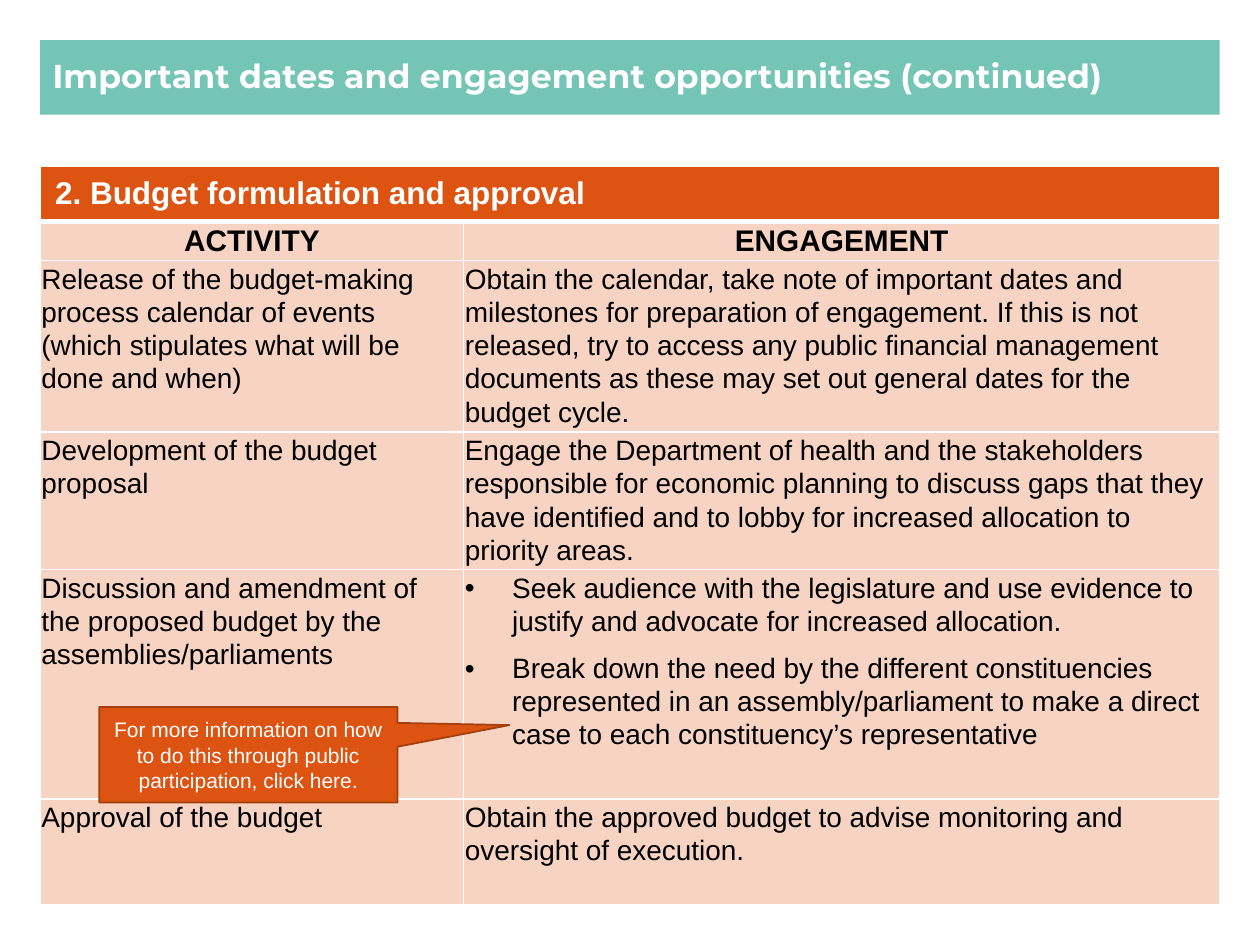
import pptx
import pptx.dml.color
import pptx.enum.shapes
import pptx.enum.text
import pptx.oxml.ns
import pptx.util
import lxml.etree

Pt = pptx.util.Pt
RGBColor = pptx.dml.color.RGBColor
MSO_SHAPE = pptx.enum.shapes.MSO_SHAPE
PP_ALIGN = pptx.enum.text.PP_ALIGN
MSO_ANCHOR = pptx.enum.text.MSO_ANCHOR
qn = pptx.oxml.ns.qn

TEAL = RGBColor(0x74, 0xC5, 0xB6)
ORANGE = RGBColor(0xDD, 0x54, 0x12)
DARK_ORANGE = RGBColor(0xA3, 0x3E, 0x0D)
PEACH = RGBColor(0xF6, 0xD3, 0xC3)
WHITE = RGBColor(0xFF, 0xFF, 0xFF)
BLACK = RGBColor(0, 0, 0)

LEFT, WIDTH = 23, 674
COLUMN_WIDTHS = [242, 432]
ROW_HEIGHTS = [31.5, 22.5, 98, 78.5, 131, 60.5]
BULLET_INDENT = 27

SECTION = "2. Budget formulation and approval"
HEADINGS = ["ACTIVITY", "ENGAGEMENT"]
ACTIVITIES = [
    ("Release of the budget-making process calendar of events (which stipulates "
     "what will be done and when)",
     ["Obtain the calendar, take note of important dates and milestones for "
      "preparation of engagement. If this is not released, try to access any "
      "public financial management documents as these may set out general dates "
      "for the budget cycle."]),
    ("Development of the budget proposal",
     ["Engage the Department of health and the stakeholders responsible for "
      "economic planning to discuss gaps that they have identified and to lobby "
      "for increased allocation to priority areas."]),
    ("Discussion and amendment of the proposed budget by the assemblies/parliaments",
     ["Seek audience with the legislature and use evidence to justify and "
      "advocate for increased allocation.",
      "Break down the need by the different constituencies represented in an "
      "assembly/parliament to make a direct case to each constituency’s "
      "representative"]),
    ("Approval of the budget",
     ["Obtain the approved budget to advise monitoring and oversight of execution."]),
]


def add_bullet(p):
    pPr = p._p.get_or_add_pPr()
    pPr.set("marL", str(Pt(BULLET_INDENT)))
    pPr.set("indent", str(-Pt(BULLET_INDENT)))
    lxml.etree.SubElement(pPr, qn("a:buFont"), typeface="Arial")
    lxml.etree.SubElement(pPr, qn("a:buChar"), char="•")


def write_text(tf, *texts, size=16, font="Arial", color=BLACK, bold=False,
               align=PP_ALIGN.LEFT, line_spacing=1.07, after=8, bullets=False):
    tf.word_wrap = True
    for i, text in enumerate(texts):
        p = tf.paragraphs[0] if i == 0 else tf.add_paragraph()
        if bullets:
            add_bullet(p)
        p.alignment = align
        p.line_spacing = line_spacing
        p.space_after = Pt(after)
        r = p.add_run()
        r.text = text
        r.font.size = Pt(size)
        r.font.name = font
        r.font.bold = bold
        r.font.color.rgb = color


def add_box(s, shape, left, top, width, height, fill, line=None):
    sp = s.shapes.add_shape(shape, Pt(left), Pt(top), Pt(width), Pt(height))
    sp.shadow.inherit = False
    sp.fill.solid()
    sp.fill.fore_color.rgb = fill
    if line is None:
        sp.line.fill.background()
    else:
        sp.line.color.rgb = line
        sp.line.width = Pt(1)
    sp.text_frame.vertical_anchor = MSO_ANCHOR.MIDDLE
    return sp


def set_borders(cell, top=1, bottom=1):
    tcPr = cell._tc.get_or_add_tcPr()
    for side, width in (("L", 1), ("R", 1), ("T", top), ("B", bottom)):
        ln = lxml.etree.SubElement(tcPr, qn("a:ln" + side), w=str(Pt(width)))
        fill = lxml.etree.SubElement(ln, qn("a:solidFill"))
        lxml.etree.SubElement(fill, qn("a:srgbClr"), val=str(WHITE))


def format_cell(cell, fill, margins, top=1, bottom=1):
    set_borders(cell, top, bottom)
    cell.fill.solid()
    cell.fill.fore_color.rgb = fill
    (cell.margin_left, cell.margin_top,
     cell.margin_right, cell.margin_bottom) = [Pt(m) for m in margins]


def add_activity_table(s):
    frame = s.shapes.add_table(len(ROW_HEIGHTS), len(COLUMN_WIDTHS), Pt(LEFT),
                               Pt(95), Pt(WIDTH), Pt(sum(ROW_HEIGHTS)))
    table = frame.table
    table.first_row = False
    table.horz_banding = False
    for column, width in zip(table.columns, COLUMN_WIDTHS):
        column.width = Pt(width)
    for i, (row, height) in enumerate(zip(table.rows, ROW_HEIGHTS)):
        row.height = Pt(height)
        for cell in row.cells:
            if i == 0:
                format_cell(cell, ORANGE, (8.5, 4, 8.5, 4), bottom=3)
            else:
                format_cell(cell, PEACH, (0.7, 0.7, 0.7, 0), top=3 if i == 1 else 1)

    table.cell(0, 0).merge(table.cell(0, 1))
    write_text(table.cell(0, 0).text_frame, SECTION, size=18, color=WHITE, bold=True)
    for col, heading in enumerate(HEADINGS):
        write_text(table.cell(1, col).text_frame, heading, size=17, bold=True,
                   align=PP_ALIGN.CENTER)
    for row, (activity, engagement) in enumerate(ACTIVITIES, start=2):
        write_text(table.cell(row, 0).text_frame, activity)
        write_text(table.cell(row, 1).text_frame, *engagement,
                   bullets=len(engagement) > 1)


def add_title(s):
    sp = add_box(s, MSO_SHAPE.RECTANGLE, LEFT, 23, WIDTH, 42.5, TEAL)
    write_text(sp.text_frame, "Important dates and engagement opportunities (continued)",
               size=18.9, font="Montserrat", color=WHITE, bold=True,
               line_spacing=0.9, after=0)


def add_callout(s):
    sp = add_box(s, MSO_SHAPE.RECTANGULAR_CALLOUT, 56.7, 404, 170.5, 54.5,
                 ORANGE, DARK_ORANGE)
    sp.adjustments[0] = 0.875
    sp.adjustments[1] = -0.31
    write_text(sp.text_frame, "For more information on how to do this through public "
               "participation, click here.", size=12, color=WHITE,
               align=PP_ALIGN.CENTER, line_spacing=1.0, after=0)


def main():
    prs = pptx.Presentation()
    prs.slide_width, prs.slide_height = Pt(720), Pt(540)
    s = prs.slides.add_slide(prs.slide_layouts[6])
    add_title(s)
    add_activity_table(s)
    add_callout(s)
    prs.save("out.pptx")


if __name__ == "__main__":
    main()
